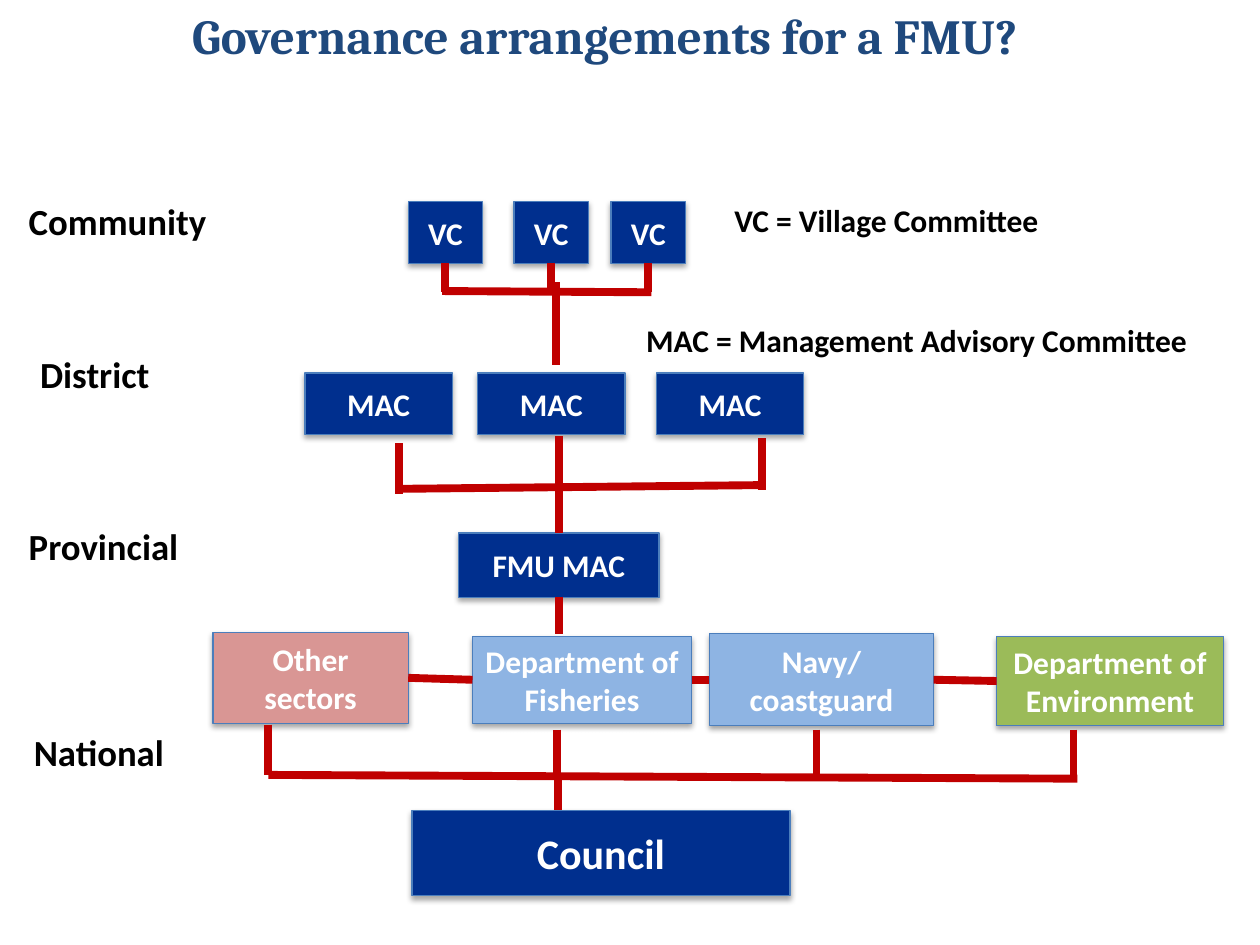
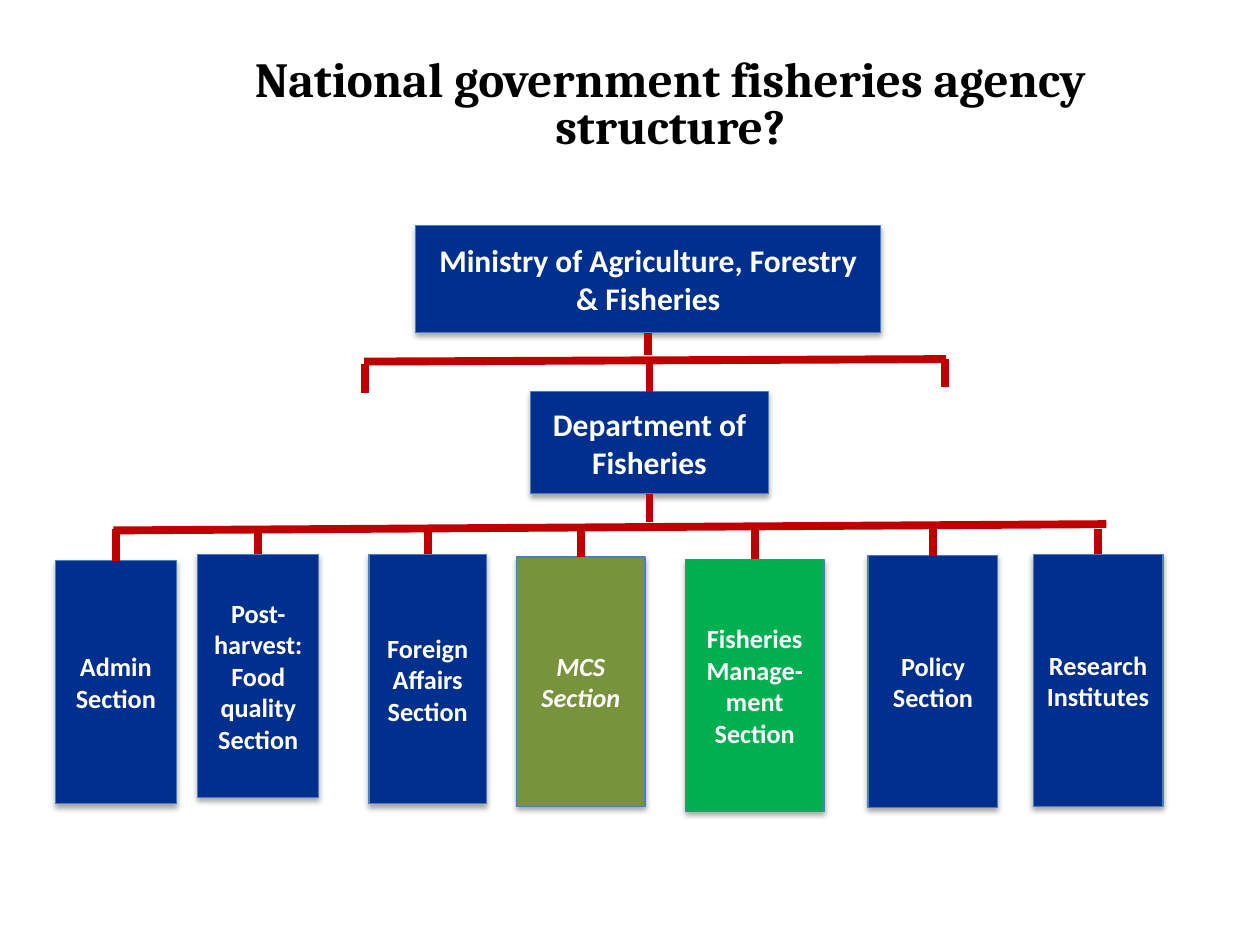
from dataclasses import dataclass
from typing import NamedTuple

from lxml.etree import SubElement
from pptx import Presentation
from pptx.dml.color import RGBColor
from pptx.enum.shapes import MSO_CONNECTOR, MSO_SHAPE
from pptx.enum.text import MSO_ANCHOR, PP_ALIGN
from pptx.oxml.ns import qn
from pptx.util import Emu, Inches, Pt


@dataclass(frozen=True)
class Theme:
    heading_font: str = "Cambria"
    body_font: str = "Calibri"
    navy: str = "002F8E"
    title_blue: str = "1F497D"
    sky: str = "8EB4E3"
    rose: str = "D99694"
    lime: str = "9BBB59"
    olive: str = "77933C"
    green: str = "00B050"
    outline: str = "4B7EBC"
    link: str = "C00000"
    white: str = "FFFFFF"
    black: str = "000000"
    title_size: int = 28
    council_size: int = 24
    level_size: int = 21
    box_size: int = 18
    section_size: int = 15
    link_width: float = 4.5


T = Theme()

# Grid: 100 columns by 75 rows of square cells
WIDTH, HEIGHT = Inches(10), Inches(7.5)
CELL = WIDTH / 100
SNAP = 0.2  # cells within which a link end joins the middle of a box side


class Box(NamedTuple):
    text: str
    col: float
    row: float
    cols: float
    rows: float
    fill: str = T.navy
    size: int = T.box_size
    italic: bool = False

    def sides(self) -> list[tuple[float, float]]:
        """Middles of the top, left, bottom and right sides."""
        mid_col, mid_row = self.col + self.cols / 2, self.row + self.rows / 2
        return [(mid_col, self.row), (self.col, mid_row),
                (mid_col, self.row + self.rows), (self.col + self.cols, mid_row)]


class Label(NamedTuple):
    text: str
    col: float
    row: float
    cols: float
    rows: float
    size: int


class Link(NamedTuple):
    col1: float
    row1: float
    col2: float
    row2: float


def drop(col: float, top: float, bottom: float) -> Link:
    return Link(col, top, col, bottom)


def cells(*values: float) -> list[Emu]:
    return [Emu(round(v * CELL)) for v in values]


def write(tf, text: str, size: int, color: str, font: str = T.body_font,
          align=PP_ALIGN.LEFT, spacing: float = 1.0, italic: bool = False) -> None:
    tf.word_wrap = True
    tf.text = text
    for p in tf.paragraphs:
        p.alignment = align
        p.line_spacing = spacing
        for r in p.runs:
            r.font.name, r.font.size, r.font.bold = font, Pt(size), True
            r.font.color.rgb = RGBColor.from_string(color)
            if italic:
                r.font.italic = True


def add_title(slide, text: str, col: float, row: float, color: str) -> None:
    tf = slide.shapes.add_textbox(*cells(col, row, 75, 5.2)).text_frame
    tf.vertical_anchor = MSO_ANCHOR.MIDDLE
    write(tf, text, T.title_size, color, T.heading_font, PP_ALIGN.CENTER, 0.8)


def add_label(slide, label: Label) -> None:
    sp = slide.shapes.add_textbox(*cells(*label[1:5]))
    write(sp.text_frame, label.text, label.size, T.black)


def add_shadow(sp) -> None:
    sp.shadow.inherit = False
    effects = sp._element.spPr.find(qn("a:effectLst"))
    shadow = SubElement(effects, qn("a:outerShdw"), blurRad="40000", dist="23000",
                        dir="5400000", rotWithShape="0")
    color = SubElement(shadow, qn("a:srgbClr"), val=T.black)
    SubElement(color, qn("a:alpha"), val="35000")


def add_box(slide, box: Box):
    sp = slide.shapes.add_shape(MSO_SHAPE.RECTANGLE, *cells(*box[1:5]))
    sp.fill.solid()
    sp.fill.fore_color.rgb = RGBColor.from_string(box.fill)
    sp.line.color.rgb = RGBColor.from_string(T.outline)
    sp.line.width = Pt(0.75)
    add_shadow(sp)
    tf = sp.text_frame
    tf.margin_left = tf.margin_right = Inches(0.09)
    tf.vertical_anchor = MSO_ANCHOR.MIDDLE
    write(tf, box.text, box.size, T.white, align=PP_ALIGN.CENTER, italic=box.italic)
    return sp


def add_link(slide, link: Link, drawn: list) -> None:
    line = slide.shapes.add_connector(MSO_CONNECTOR.STRAIGHT, *cells(*link))
    line.line.color.rgb = RGBColor.from_string(T.link)
    line.line.width = Pt(T.link_width)
    SubElement(line._element.spPr, qn("a:effectLst"))
    ends = ((line.begin_connect, link[:2]), (line.end_connect, link[2:]))
    for connect, (col, row) in ends:
        for box, sp in drawn:
            for site, (x, y) in enumerate(box.sides()):
                if abs(x - col) <= SNAP and abs(y - row) <= SNAP:
                    connect(sp, site)


def add_chart_of_boxes(slide, boxes: list[Box], links: list[Link]) -> None:
    drawn = [(box, add_box(slide, box)) for box in boxes]
    for link in links:
        add_link(slide, link, drawn)


def governance_slide(slide) -> None:
    add_title(slide, "Governance arrangements for a FMU?", 10.5, 0.6, T.title_blue)

    # Levels and abbreviations
    levels = [("Community", 1.3, 15.3), ("District", 2.2, 27.4),
              ("Provincial", 1.3, 41.1), ("National", 1.7, 57.4)]
    for text, col, row in levels:
        add_label(slide, Label(text, col, row, 20, 4.5, T.level_size))
    add_label(slide, Label("VC = Village Committee", 57.3, 15.5, 26.4, 4, T.box_size))
    add_label(slide, Label("MAC = Management Advisory Committee",
                           50.3, 25, 45.4, 4, T.box_size))

    # Committees and departments
    villages = [Box("VC", col, 16, 5.9, 4.9) for col in (32.4, 40.8, 48.5)]
    districts = [Box("MAC", col, 29.6, 11.7, 4.9) for col in (24.2, 37.9, 52.1)]
    province = Box("FMU MAC", 36.4, 42.3, 15.9, 5.1)
    departments = [
        Box("Other sectors", 16.9, 50.2, 15.5, 7.2, T.rose),
        Box("Department of Fisheries", 37.5, 50.5, 17.4, 6.9, T.sky),
        Box("Navy/\ncoastguard", 56.3, 50.3, 17.8, 7.3, T.sky),
        Box("Department of Environment", 79.1, 50.5, 18, 7.1, T.lime),
    ]
    council = Box("Council", 32.7, 64.3, 30, 6.8, size=T.council_size)

    # Links from level to level
    village_drops = [drop(v.sides()[2][0], 20.9, 23.2) for v in villages]
    department_links = [Link(*a.sides()[3], *b.sides()[1])
                        for a, b in zip(departments, departments[1:])]
    links = village_drops + department_links + [
        Link(35.1, 23.1, 51.7, 23.2),
        drop(44.1, 22.4, 29),
        drop(31.7, 35.2, 39.2),
        drop(60.5, 34.8, 38.9),
        Link(31.4, 38.8, 60.5, 38.5),
        drop(44.35, 34.6, 42.3),
        drop(44.35, 47.4, 50.3),
        drop(21.3, 57.5, 61.5),
        *(drop(col, 57.9, 61.8) for col in (44.2, 64.8, 85.2)),
        Link(21.3, 61.5, 85.5, 61.8),
        drop(44.3, 61.7, 64.3),
    ]
    add_chart_of_boxes(
        slide, [*villages, *districts, province, *departments, council], links)


def agency_slide(slide) -> None:
    add_title(slide, "National government fisheries agency structure?",
              15.7, 5.9, T.black)

    # Ministry, department and its sections
    small = T.section_size
    ministry = Box("Ministry of Agriculture, Forestry & Fisheries", 33, 17.9, 36.9, 8.5)
    department = Box("Department of Fisheries", 42.1, 31.1, 18.9, 8.1)
    sections = [
        Box("Admin Section", 4.4, 44.5, 9.6, 19.3, size=small),
        Box("Post-harvest:\nFood quality\nSection", 15.7, 44, 9.6, 19.3, size=small),
        Box("Foreign Affairs\nSection", 29.3, 44, 9.3, 19.8, size=small),
        Box("MCS Section", 41, 44.2, 10.2, 19.8, T.olive, small, italic=True),
        Box("Fisheries Manage-ment Section", 54.4, 44.4, 11, 20, T.green, small),
        Box("Policy Section", 68.9, 44.1, 10.3, 20, size=small),
        Box("Research Institutes", 82, 44, 10.3, 20, size=small),
    ]

    # Links from the ministry down to the sections
    section_drops = [drop(s.sides()[0][0], 42, s.row) for s in sections]
    links = section_drops + [
        drop(51.45, 26.4, 28.2),
        Link(75.1, 28.5, 28.9, 28.7),
        drop(29, 28.9, 31.2),
        drop(75, 28.5, 30.7),
        drop(51.55, 28.8, 31.1),
        drop(51.55, 39.2, 41.4),
        Link(87.8, 41.6, 9, 42.1),
    ]
    add_chart_of_boxes(slide, [ministry, department, *sections], links)


def main() -> None:
    prs = Presentation()
    prs.slide_width, prs.slide_height = WIDTH, HEIGHT
    for build in (governance_slide, agency_slide):
        build(prs.slides.add_slide(prs.slide_layouts[6]))
    prs.save("out.pptx")


if __name__ == "__main__":
    main()
